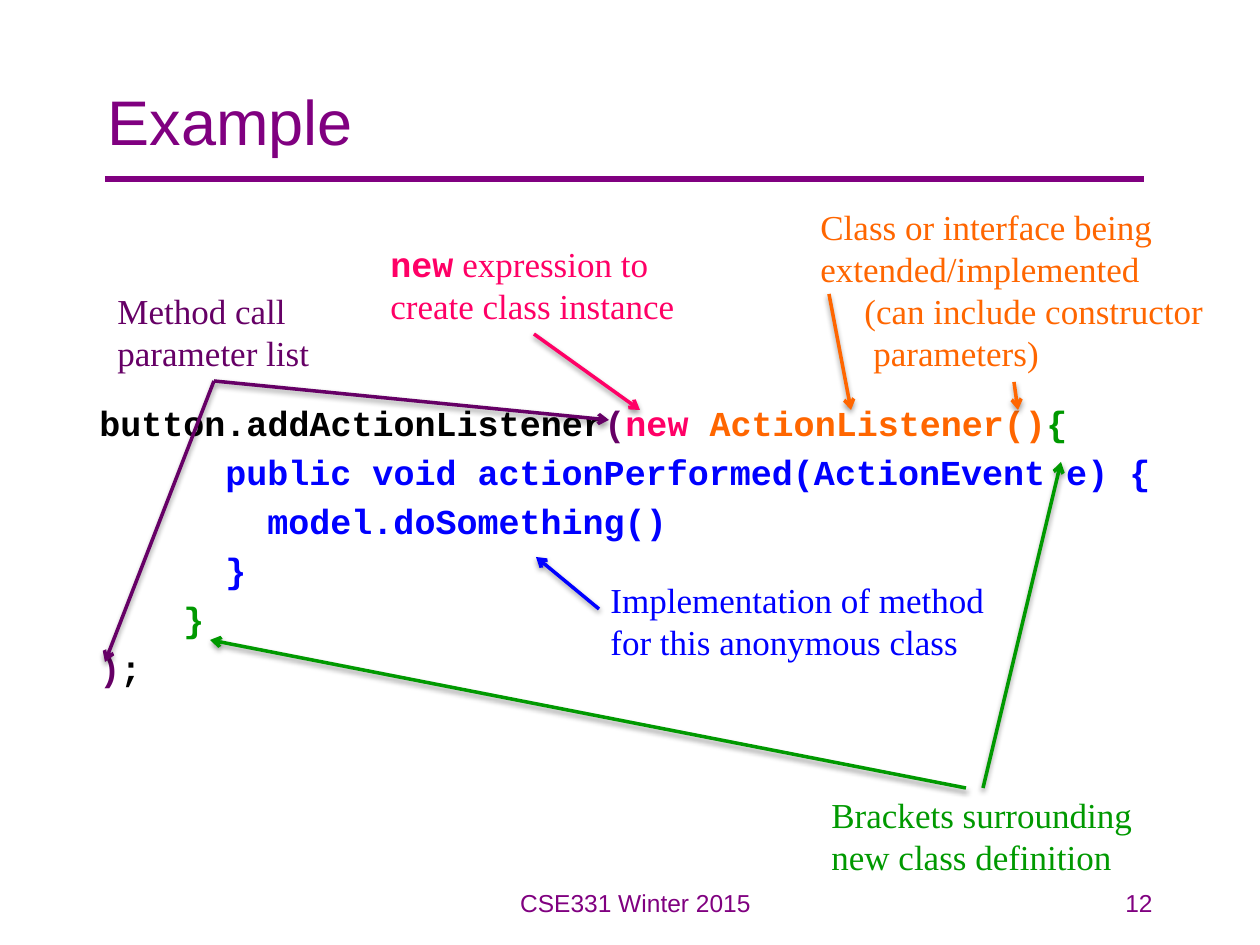
from dataclasses import dataclass

from lxml import etree
from pptx import Presentation, util as u
from pptx.dml.color import RGBColor
from pptx.enum import shapes, text
from pptx.oxml.ns import qn

EMU = 914400 / 126


@dataclass(frozen=True)
class Theme:
    sans: str = "Arial"
    serif: str = "Times New Roman"
    mono: str = "Courier New"
    head: int = 36
    base: int = 20
    foot: int = 14
    purple: str = "800080"
    plum: str = "660066"
    pink: str = "FF0066"
    orange: str = "FF6600"
    green: str = "009900"
    blue: str = "0000FF"
    black: str = "000000"


def px(n):
    return u.Emu(round(n * EMU))


class Deck:
    def __init__(self, theme):
        self.theme = theme
        self.prs = Presentation()
        self.prs.slide_width, self.prs.slide_height = px(1260), px(945)
        self.slide = self.prs.slides.add_slide(self.prs.slide_layouts[5])

    def style(self, run, font, size, color, bold=False):
        run.font.name, run.font.size, run.font.bold = font, u.Pt(size), bold
        run.font.color.rgb = RGBColor.from_string(color)

    def title(self, words, box):
        shape = self.slide.shapes.title
        shape.left, shape.top, shape.width, shape.height = map(px, box)
        frame = shape.text_frame
        frame.text = words
        frame.vertical_anchor = text.MSO_ANCHOR.MIDDLE
        para = frame.paragraphs[0]
        para.alignment = text.PP_ALIGN.LEFT
        self.style(para.runs[0], self.theme.sans, self.theme.head, self.theme.purple)

    def text(self, home, box, lines, size, wrap=True):
        """Add lines of (indent, [(words, font, color, bold), ...])."""
        frame = home.add_textbox(*map(px, box)).text_frame
        frame.word_wrap = wrap
        for i, (indent, parts) in enumerate(lines):
            para = frame.add_paragraph() if i else frame.paragraphs[0]
            if indent:
                para._p.get_or_add_pPr().set("marL", str(px(indent)))
            for words, font, color, bold in parts:
                run = para.add_run()
                run.text = words
                self.style(run, font, size, color, bold)
        return frame

    def line(self, home, ends, color, width, arrow=False):
        line = home.add_connector(shapes.MSO_CONNECTOR.STRAIGHT, *map(px, ends))
        line.line.color.rgb = RGBColor.from_string(color)
        line.line.width = u.Pt(width)
        props = line._element.spPr
        if arrow:
            etree.SubElement(line.line._get_or_add_ln(), qn("a:tailEnd"), type="arrow")
        glow = etree.SubElement(props, qn("a:effectLst"))
        if arrow:
            shade = etree.SubElement(glow, qn("a:outerShdw"), blurRad="40000",
                                     dist="20000", dir="5400000", rotWithShape="0")
            tint = etree.SubElement(shade, qn("a:srgbClr"), val=self.theme.black)
            etree.SubElement(tint, qn("a:alpha"), val="38000")

    def note(self, box, color, lines, arrows):
        """Group a label with its arrows; lines are (indent, words, code word)."""
        t = self.theme
        home = self.slide.shapes.add_group_shape().shapes
        rows = [(indent, [(code, t.mono, color, True)] * bool(code)
                 + [(words, t.serif, color, False)])
                for indent, words, code in lines]
        frame = self.text(home, box, rows, t.base, wrap=False)
        for para in frame.paragraphs:
            para.line_spacing = u.Pt(24)
        for ends in arrows:
            self.line(home, ends, color, 2, arrow=True)

    def code(self, box, rows):
        """Add code rows of (columns of indent, [(words, color), ...])."""
        t = self.theme
        column = 21
        lines = [(cols * column, [(words, t.mono, color, True) for words, color in parts])
                 for cols, parts in rows]
        frame = self.text(self.slide.shapes, box, lines, t.base)
        for para in frame.paragraphs[1:]:
            para.space_before = u.Pt(4)

    def foot(self, box, words, align):
        t = self.theme
        row = (0, [(words, t.sans, t.purple, False)])
        frame = self.text(self.slide.shapes, box, [row], t.foot)
        frame.paragraphs[0].alignment = align


def main():
    t = Theme()
    deck = Deck(t)
    deck.line(deck.slide.shapes, (105, 179, 1144, 179), t.purple, 3)
    deck.title("Example", (95, 41, 1071, 158))
    deck.code((87, 395, 1110, 310), [
        (0, [("button.addActionListener", t.black), ("(", t.plum), ("new ", t.pink),
             ("ActionListener()", t.orange), ("{", t.green)]),
        (6, [("public void actionPerformed(ActionEvent e) {", t.blue)]),
        (8, [("model.doSomething()", t.blue)]),
        (6, [("}", t.blue)]),
        (4, [("}", t.green)]),
        (0, [(")", t.plum), (";", t.black)]),
    ])
    deck.note((378, 236, 311, 97), t.pink,
              [(0, " expression to", "new"), (0, "create class instance", "")],
              [(534, 334, 640, 410)])
    deck.note((819, 787, 329, 97), t.green,
              [(0, "Brackets surrounding", ""), (0, "new class definition", "")],
              [(966, 788, 210, 640), (983, 788, 1061, 462)])
    deck.note((598, 572, 402, 97), t.blue,
              [(0, "Implementation of method", ""), (0, "for this anonymous class", "")],
              [(599, 609, 536, 557)])
    deck.note((105, 283, 218, 97), t.plum,
              [(0, "Method call", ""), (0, "parameter list", "")],
              [(214, 381, 609, 420), (214, 381, 105, 662)])
    deck.note((808, 199, 411, 183), t.orange,
              [(0, "Class or interface being", ""), (0, "extended/implemented", ""),
               (44, "(can include constructor", ""), (53, "parameters)", "")],
              [(829, 294, 851, 410), (1014, 382, 1018, 410)])
    deck.foot((399, 882, 473, 63), "CSE331 Winter 2015", text.PP_ALIGN.CENTER)
    deck.foot((903, 882, 262, 63), "12", text.PP_ALIGN.RIGHT)
    deck.prs.save("out.pptx")


if __name__ == "__main__":
    main()
